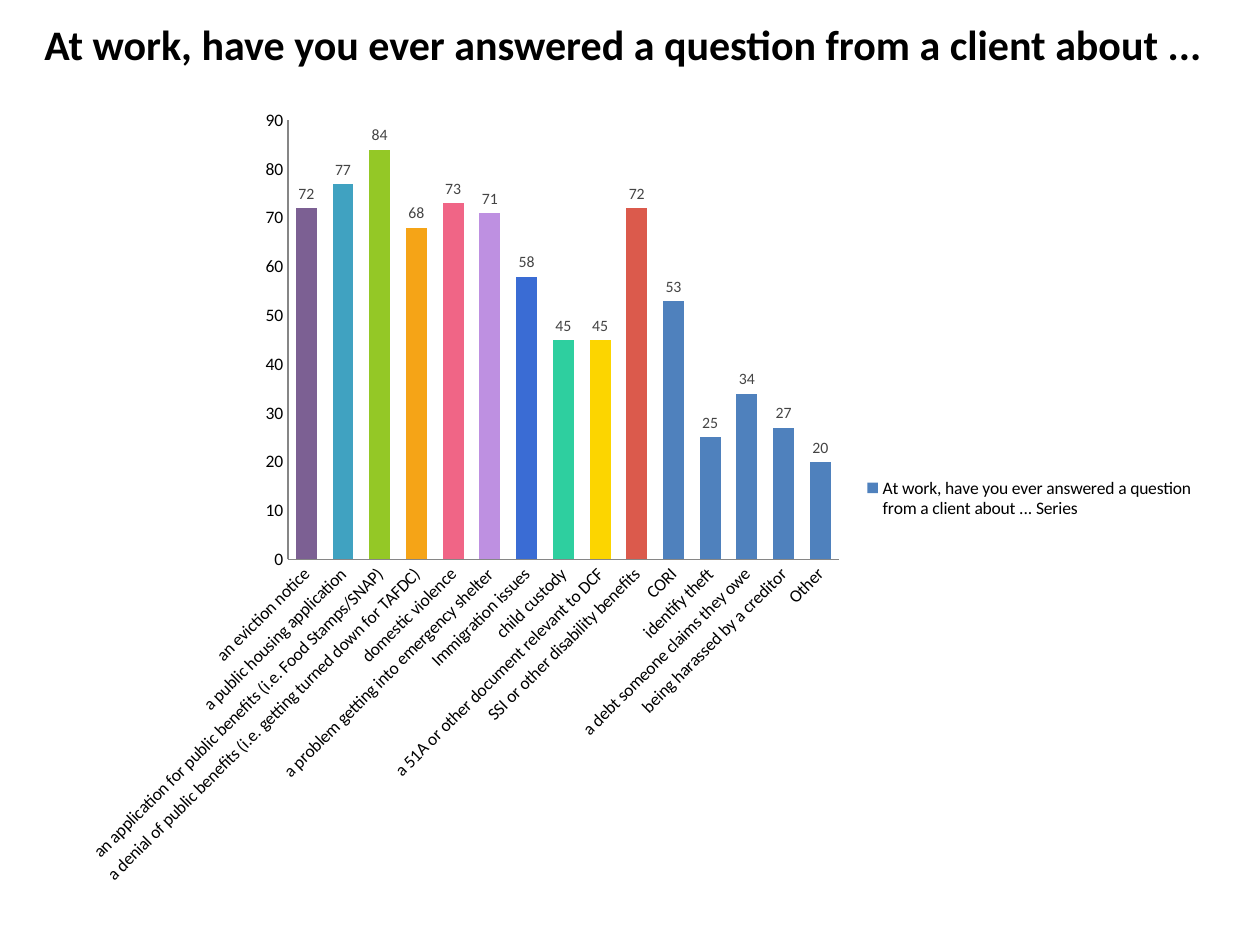
from typing import NamedTuple, Optional

from pptx import Presentation
from pptx import util as u
from pptx.chart.data import CategoryChartData
from pptx.dml.color import RGBColor
from pptx.enum import chart as ch, text

QUESTION = "At work, have you ever answered a question from a client about ..."
FONT = "Calibri"
SERIES_COLOR = "4F81BD"


class Topic(NamedTuple):
    label: str
    count: int
    color: Optional[str] = None


# Each label starts with a space, as it continues the question.
TOPICS = [
    Topic(" an eviction notice", 72, "7C6093"),
    Topic(" a public housing application", 77, "40A2C1"),
    Topic(" an application for public benefits (i.e. Food Stamps/SNAP)", 84, "94C826"),
    Topic(" a denial of public benefits (i.e. getting turned down for TAFDC)", 68, "F5A417"),
    Topic(" domestic violence", 73, "F06586"),
    Topic(" a problem getting into emergency shelter", 71, "BE90E1"),
    Topic(" Immigration issues", 58, "3A6CD4"),
    Topic(" child custody", 45, "2ECF9F"),
    Topic(" a 51A or other document relevant to DCF", 45, "FCD500"),
    Topic(" SSI or other disability benefits", 72, "DB5A4C"),
    Topic(" CORI", 53),
    Topic(" identify theft", 25),
    Topic(" a debt someone claims they owe", 34),
    Topic(" being harassed by a creditor", 27),
    Topic(" Other", 20),
]


def rgb(color: str) -> RGBColor:
    return RGBColor.from_string(color)


def set_font(font, size: float, color: str = "000000", bold: bool = False) -> None:
    values = {"name": FONT, "size": u.Pt(size), "bold": bold}
    for name, value in values.items():
        setattr(font, name, value)
    font.color.rgb = rgb(color)


def fill(fmt, color: str) -> None:
    fmt.fill.solid()
    fmt.fill.fore_color.rgb = rgb(color)


def add_title(s) -> None:
    box = s.shapes.add_textbox(u.Inches(0.1), u.Inches(0.1), u.Inches(9.69), u.Inches(0.5))
    tf = box.text_frame
    tf.word_wrap = True
    tf.auto_size = text.MSO_AUTO_SIZE.SHAPE_TO_FIT_TEXT
    p = tf.paragraphs[0]
    p.alignment = text.PP_ALIGN.CENTER
    r = p.add_run()
    r.text = QUESTION
    set_font(r.font, 24, bold=True)


def style_axes(chart) -> None:
    for axis in (chart.category_axis, chart.value_axis):
        axis.has_major_gridlines = False
        axis.major_tick_mark = axis.minor_tick_mark = ch.XL_TICK_MARK.NONE
        axis.format.line.color.rgb = rgb("868686")
        set_font(axis.tick_labels.font, 10)
    value_axis = chart.value_axis
    limits = {"minimum_scale": 0, "maximum_scale": 90, "major_unit": 10}
    for name, value in limits.items():
        setattr(value_axis, name, value)
    # Slant the topic names upwards by 45 degrees (60000 units each).
    for body in chart.category_axis._element.xpath("c:txPr/a:bodyPr"):
        body.set("rot", str(-45 * 60000))


def style_columns(plot) -> None:
    plot.gap_width = 75
    plot.vary_by_categories = False
    series = plot.series[0]
    fill(series.format, SERIES_COLOR)
    for i, topic in enumerate(TOPICS):
        if topic.color:
            fill(series.points[i].format, topic.color)
    labels = series.data_labels
    labels.show_value = True
    labels.position = ch.XL_LABEL_POSITION.OUTSIDE_END
    set_font(labels.font, 9, "444444")


def add_answer_chart(s) -> None:
    data = CategoryChartData()
    data.categories = [topic.label for topic in TOPICS]
    data.add_series(f"{QUESTION} Series", [topic.count for topic in TOPICS])
    chart = s.shapes.add_chart(
        ch.XL_CHART_TYPE.COLUMN_CLUSTERED,
        u.Inches(0.5), u.Inches(0.75), u.Inches(9.08), u.Inches(6.42), data,
    ).chart
    set_font(chart.font, 10)
    chart.has_title = False
    chart.has_legend = True
    chart.legend.position = ch.XL_LEGEND_POSITION.RIGHT
    chart.legend.include_in_layout = False
    set_font(chart.legend.font, 10)
    style_axes(chart)
    style_columns(chart.plots[0])


def main() -> None:
    prs = Presentation()
    prs.slide_width, prs.slide_height = u.Inches(10), u.Inches(7.5)
    s = prs.slides.add_slide(prs.slide_layouts[6])
    add_title(s)
    add_answer_chart(s)
    prs.save("out.pptx")


if __name__ == "__main__":
    main()
